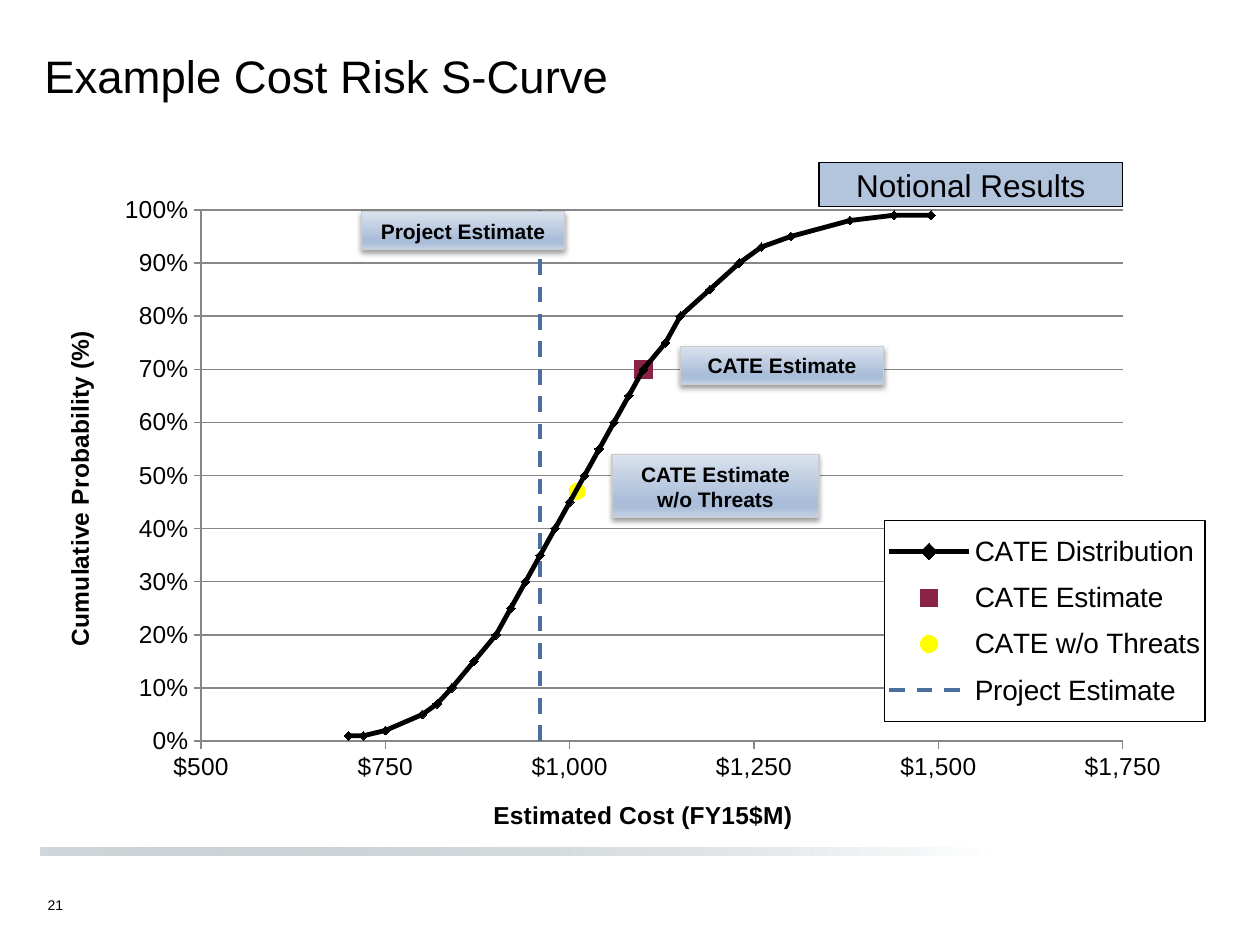
from dataclasses import dataclass

import lxml.etree
import pptx
import pptx.chart.data
import pptx.dml.color
import pptx.enum.chart
import pptx.enum.dml
import pptx.enum.shapes
import pptx.enum.text
import pptx.oxml
import pptx.oxml.ns
import pptx.util

Cm, Pt = pptx.util.Cm, pptx.util.Pt
qn, nsdecls = pptx.oxml.ns.qn, pptx.oxml.ns.nsdecls
ALIGN, ANCHOR = pptx.enum.text.PP_ALIGN, pptx.enum.text.MSO_ANCHOR
MARKER = pptx.enum.chart.XL_MARKER_STYLE


@dataclass(frozen=True)
class Theme:
    font: str = "Arial"
    ink: str = "000000"
    paper: str = "FFFFFF"
    grid: str = "878787"
    steel: str = "4D6EA1"
    maroon: str = "8B2346"
    yellow: str = "FFFF00"
    banner: str = "B3C4DD"
    callout_line: str = "CCCCCC"
    callout_stops: tuple = ((0, "D9E2EE", 100), (74, "AABDD9", 100),
                            (83, "AABDD9", 100), (100, "C6D3E5", 100))
    rule_stops: tuple = ((0, "82939B", 37), (100, "FFFFFF", 100))
    title_size: int = 26
    banner_size: int = 18
    legend_size: int = 16
    axis_size: int = 14
    callout_size: int = 12
    number_size: int = 8


THEME = Theme()

PROBABILITIES = [0.01, 0.01, 0.02, 0.05, 0.07, 0.1, 0.15, 0.2, 0.25, 0.3, 0.35, 0.4, 0.45, 0.5,
                 0.55, 0.6, 0.65, 0.7, 0.75, 0.8, 0.85, 0.9, 0.93, 0.95, 0.98, 0.99, 0.99]
COSTS = [700, 720, 750, 800, 820, 840, 870, 900, 920, 940, 960, 980, 1000, 1020,
         1040, 1060, 1080, 1100, 1130, 1150, 1190, 1230, 1260, 1300, 1380, 1440, 1490]

# name, points, line (colour, width, dash), marker (style, size, colour)
SERIES = [
    ("CATE Distribution", list(zip(COSTS, PROBABILITIES)), (THEME.ink, 2.75, None),
     (MARKER.DIAMOND, 5, THEME.ink)),
    ("CATE Estimate", [(1100, 0.7)], None, (MARKER.SQUARE, 10, THEME.maroon)),
    ("CATE w/o Threats", [(1010, 0.47)], None, (MARKER.CIRCLE, 9, THEME.yellow)),
    ("Project Estimate", [(960, 0), (960, 1)],
     (THEME.steel, 2.25, pptx.enum.dml.MSO_LINE.DASH), None),
]

# text and box relative to the chart, in cm
CALLOUTS = [
    ("CATE Estimate", (12.86, 3.38, 4.09, 0.76)),
    ("CATE Estimate\nw/o Threats", (11.48, 5.56, 4.17, 1.27)),
    ("Project Estimate", (6.43, 0.66, 4.09, 0.76)),
]


def rgb(value):
    return pptx.dml.color.RGBColor.from_string(value)


def style_font(font, size, color=THEME.ink, bold=False):
    font.name, font.size, font.bold = THEME.font, Pt(size), bold
    font.color.rgb = rgb(color)


def write(frame, text, size, color=THEME.ink, bold=False, align=ALIGN.LEFT,
          anchor=ANCHOR.MIDDLE, wrap=True):
    frame.word_wrap, frame.vertical_anchor = wrap, anchor
    for index, line in enumerate(text.split("\n")):
        paragraph = frame.paragraphs[0] if index == 0 else frame.add_paragraph()
        paragraph.alignment = align
        run = paragraph.add_run()
        run.text = line
        style_font(run.font, size, color, bold)


def add_box(slide, box):
    panel = slide.shapes.add_shape(pptx.enum.shapes.MSO_SHAPE.RECTANGLE, *map(Cm, box))
    panel.shadow.inherit = False
    return panel


def fill_gradient(panel, stops, angle):
    panel.fill.gradient()
    panel.fill.gradient_angle = angle
    stop_list = panel._element.spPr.find(".//" + qn("a:gsLst"))
    for old in list(stop_list):
        stop_list.remove(old)
    for position, color, alpha in stops:
        stop = lxml.etree.SubElement(stop_list, qn("a:gs"), pos=str(position * 1000))
        tint = lxml.etree.SubElement(stop, qn("a:srgbClr"), val=color)
        lxml.etree.SubElement(tint, qn("a:alpha"), val=str(alpha * 1000))


def add_drop_shadow(panel):
    effects = panel._element.spPr.find(qn("a:effectLst"))
    shadow = lxml.etree.SubElement(effects, qn("a:outerShdw"), blurRad=str(Pt(3.1)),
                                   dist=str(Pt(1.6)), dir="5400000", rotWithShape="0")
    tint = lxml.etree.SubElement(shadow, qn("a:srgbClr"), val=THEME.ink)
    lxml.etree.SubElement(tint, qn("a:alpha"), val="38000")


def manual_layout(x, y, w, h, inner=False):
    target = '<c:layoutTarget val="inner"/>' if inner else ""
    return pptx.oxml.parse_xml(
        f'<c:layout {nsdecls("c")}><c:manualLayout>{target}'
        '<c:xMode val="edge"/><c:yMode val="edge"/>'
        f'<c:x val="{x}"/><c:y val="{y}"/><c:w val="{w}"/><c:h val="{h}"/>'
        '</c:manualLayout></c:layout>')


def add_title(slide, box):
    title = slide.shapes.title
    title.left, title.top, title.width, title.height = map(Cm, box)
    write(title.text_frame, "Example Cost Risk S-Curve", THEME.title_size)


def format_axis(axis, title, number_format, low, high, step):
    axis.minimum_scale, axis.maximum_scale, axis.major_unit = low, high, step
    axis.major_tick_mark = pptx.enum.chart.XL_TICK_MARK.OUTSIDE
    axis.tick_labels.number_format = number_format
    axis.tick_labels.number_format_is_linked = False
    style_font(axis.tick_labels.font, THEME.axis_size)
    axis.format.line.color.rgb = rgb(THEME.grid)
    write(axis.axis_title.text_frame, title, THEME.axis_size, bold=True, align=ALIGN.CENTER)


def format_series(series, line, marker):
    series.smooth = True
    if line:
        color, width, dash = line
        series.format.line.color.rgb = rgb(color)
        series.format.line.width = Pt(width)
        if dash:
            series.format.line.dash_style = dash
    else:
        series.format.line.fill.background()
    if marker:
        series.marker.style, series.marker.size, color = marker
        series.marker.format.fill.solid()
        series.marker.format.fill.fore_color.rgb = rgb(color)
        series.marker.format.line.fill.background()
    else:
        series.marker.style = MARKER.NONE


def format_legend(chart):
    chart.has_legend = True
    legend = chart.legend
    legend.position = pptx.enum.chart.XL_LEGEND_POSITION.RIGHT
    legend.include_in_layout = True
    style_font(legend.font, THEME.legend_size)
    element = legend._element
    for old in element.findall(qn("c:layout")):
        element.remove(old)
    element.find(qn("c:legendPos")).addnext(manual_layout(0.717, 0.498, 0.273, 0.293))
    element.find(qn("c:overlay")).addnext(pptx.oxml.parse_xml(
        f'<c:spPr {nsdecls("c", "a")}><a:solidFill><a:srgbClr val="{THEME.paper}"/></a:solidFill>'
        f'<a:ln w="9525"><a:solidFill><a:srgbClr val="{THEME.ink}"/></a:solidFill></a:ln></c:spPr>'))


def add_s_curve(slide, box):
    data = pptx.chart.data.XyChartData()
    for name, points, _, _ in SERIES:
        series = data.add_series(name)
        for cost, probability in points:
            series.add_data_point(cost, probability)
    chart = slide.shapes.add_chart(pptx.enum.chart.XL_CHART_TYPE.XY_SCATTER_SMOOTH,
                                   *map(Cm, box), data).chart
    chart.has_title = False
    style_font(chart.font, THEME.legend_size)
    chart.plots[0].vary_by_categories = False
    for series, (_, _, line, marker) in zip(chart.plots[0].series, SERIES):
        format_series(series, line, marker)

    format_axis(chart.category_axis, "Estimated Cost (FY15$M)", '"$"#,##0', 500, 1750, 250)
    format_axis(chart.value_axis, "Cumulative Probability (%)", "0%", 0, 1, 0.1)
    chart.category_axis.has_major_gridlines = False
    chart.value_axis.has_major_gridlines = True
    chart.value_axis.major_gridlines.format.line.color.rgb = rgb(THEME.grid)
    format_legend(chart)

    plot_area = chart._chartSpace.find(".//" + qn("c:plotArea"))
    for old in plot_area.findall(qn("c:layout")):
        plot_area.remove(old)
    plot_area.insert(0, manual_layout(0.135, 0.045, 0.785, 0.775, inner=True))


def add_annotations(slide, box):
    left, top = box[:2]
    # Callouts beside the curve
    for text, (x, y, width, height) in CALLOUTS:
        callout = add_box(slide, (left + x, top + y, width, height))
        fill_gradient(callout, THEME.callout_stops, 270)
        callout.line.color.rgb = rgb(THEME.callout_line)
        callout.line.width = Pt(0.75)
        add_drop_shadow(callout)
        write(callout.text_frame, text, THEME.callout_size, bold=True, align=ALIGN.CENTER)
    # Banner above the plot
    banner = add_box(slide, (left + 15.65, top - 0.33, 6.12, 0.89))
    banner.fill.solid()
    banner.fill.fore_color.rgb = rgb(THEME.banner)
    banner.line.color.rgb = rgb(THEME.ink)
    banner.line.width = Pt(0.75)
    write(banner.text_frame, "Notional Results", THEME.banner_size, align=ALIGN.CENTER)


def add_footer(slide, box):
    left, top, width, _ = box
    rule = add_box(slide, (left + 0.1, top, width, 0.15))
    fill_gradient(rule, THEME.rule_stops, 0)
    rule.line.fill.background()
    number = slide.shapes.add_textbox(*map(Cm, (left, top + 0.84, 0.86, 0.61)))
    write(number.text_frame, "21", THEME.number_size, wrap=False)


def main():
    deck = pptx.Presentation()
    deck.slide_width, deck.slide_height = Cm(25.4), Cm(19.05)
    slide = deck.slides.add_slide(deck.slide_layouts[5])
    chart_box = (0.86, 3.61, 23.67, 13.82)
    add_footer(slide, (0.71, 17.09, 19.25, 1.45))
    add_title(slide, (0.64, 0.84, 22.86, 1.37))
    add_s_curve(slide, chart_box)
    add_annotations(slide, chart_box)
    deck.save("out.pptx")


if __name__ == "__main__":
    main()
